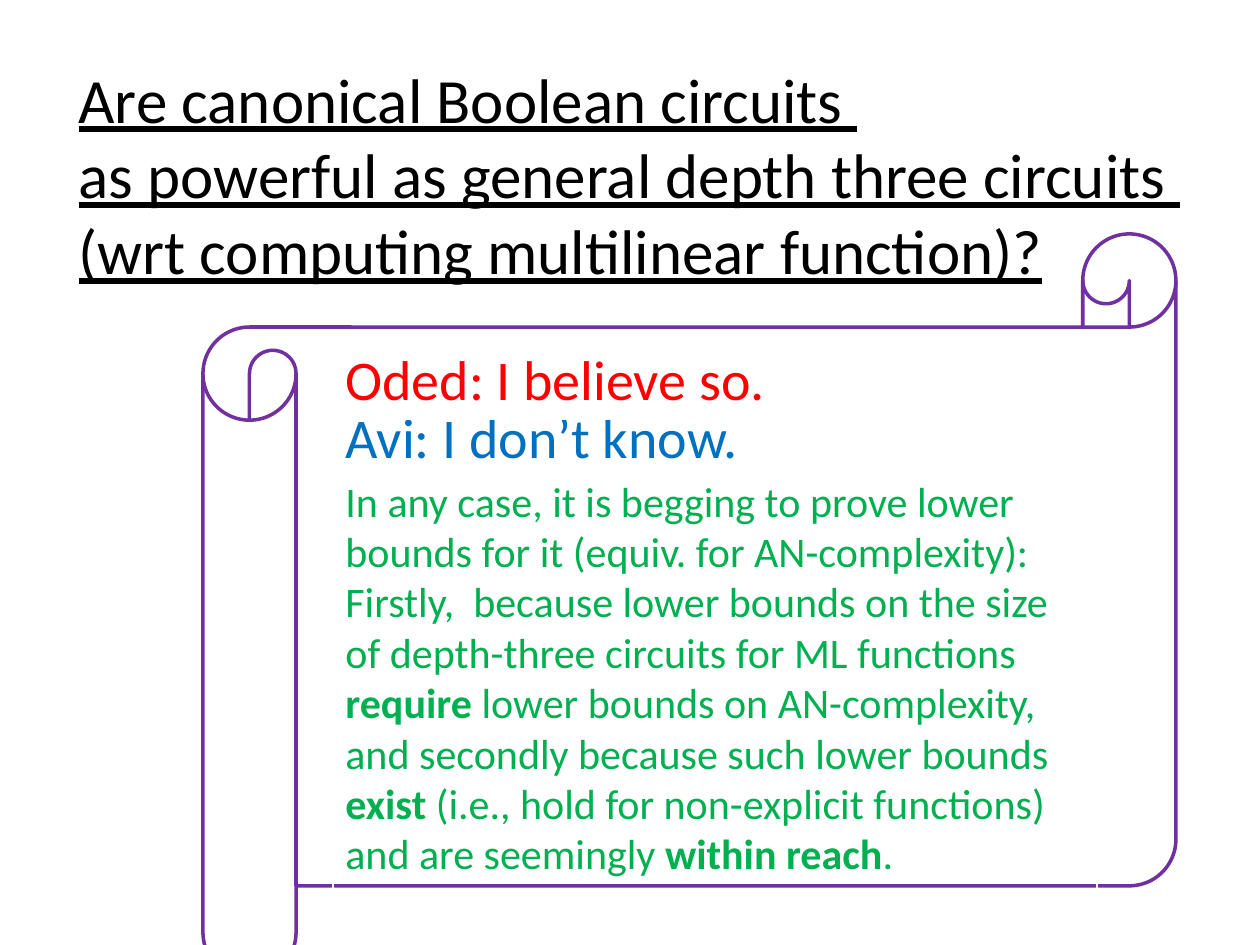
"""Build a slide with a question and the answers on a scroll."""
from pptx import Presentation
from pptx import util as u
from pptx.dml.color import RGBColor
from pptx.enum import shapes, text

PX = u.Inches(1) / 126
SIZE = (1260, 945)
THEME = {
    "font": "Calibri",
    "black": "000000", "white": "FFFFFF", "violet": "7030A0",
    "red": "FF0000", "blue": "0070C0", "green": "00B050",
    "title": 36, "voice": 32, "note": 24,
    "edge": 2, "hair": 0.75,
}

TITLE = [
    "Are canonical Boolean circuits ",
    "as powerful as general depth three circuits ",
    "(wrt computing multilinear function)?",
]
HEAD = (66, 29, 1140, 289)
SCROLL = (203, 234, 973, 745)
LEFT = 333
NOTE = [
    ("In any case, it is begging to prove lower bounds for it (equiv. for "
     "AN-complexity): Firstly,  because lower bounds on the size of "
     "depth-three circuits for ML functions ", False),
    ("require", True),
    (" lower bounds on AN-complexity, and secondly because such "
     "lower bounds ", False),
    ("exist ", True),
    ("(i.e., hold for non-explicit functions) and are seemingly ", False),
    ("within reach", True),
    (".", False),
]
BOXES = [
    ((396, 436, 81), "voice", "blue", [("Avi: I don’t know.", False)]),
    ((469, 764, 420), "note", "green", NOTE),
    ((338, 486, 81), "voice", "red", [("Oded: I believe so.", False)]),
]


def emu(*vals):
    return [u.Emu(round(v * PX)) for v in vals]


def tint(name):
    return RGBColor.from_string(THEME[name])


def add_run(para, words, size, color, bold=False):
    run = para.add_run()
    run.text = words
    font = run.font
    font.name = THEME["font"]
    font.size = u.Pt(THEME[size])
    font.color.rgb = tint(color)
    font.bold = bold
    return font


def outline(slide, kind, area, color, width):
    shape = slide.shapes.add_shape(kind, *emu(*area))
    shape.shadow.inherit = False
    shape.fill.background()
    shape.line.color.rgb = tint(color)
    shape.line.width = u.Pt(THEME[width])
    return shape


def add_title(slide):
    title = slide.shapes.title
    title.left, title.top, title.width, title.height = emu(*HEAD)
    frame = title.text_frame
    frame.auto_size = text.MSO_AUTO_SIZE.NONE
    frame.vertical_anchor = text.MSO_ANCHOR.MIDDLE
    para = frame.paragraphs[0]
    para.alignment = text.PP_ALIGN.LEFT
    for i, line in enumerate(TITLE):
        if i:
            para.add_line_break()
        add_run(para, line, "title", "black").underline = True


def add_box(slide, place, size, color, runs):
    top, wide, high = place
    box = outline(slide, shapes.MSO_SHAPE.RECTANGLE,
                  (LEFT, top, wide, high), "white", "hair")
    frame = box.text_frame
    frame.word_wrap = True
    frame.auto_size = text.MSO_AUTO_SIZE.SHAPE_TO_FIT_TEXT
    frame.vertical_anchor = text.MSO_ANCHOR.TOP
    para = frame.paragraphs[0]
    para.alignment = text.PP_ALIGN.LEFT
    for words, bold in runs:
        add_run(para, words, size, color, bold)


def main():
    deck = Presentation()
    deck.slide_width, deck.slide_height = emu(*SIZE)
    slide = deck.slides.add_slide(deck.slide_layouts[5])
    add_title(slide)
    outline(slide, shapes.MSO_SHAPE.HORIZONTAL_SCROLL, SCROLL,
            "violet", "edge")
    for box in BOXES:
        add_box(slide, *box)
    deck.save("out.pptx")


if __name__ == "__main__":
    main()
